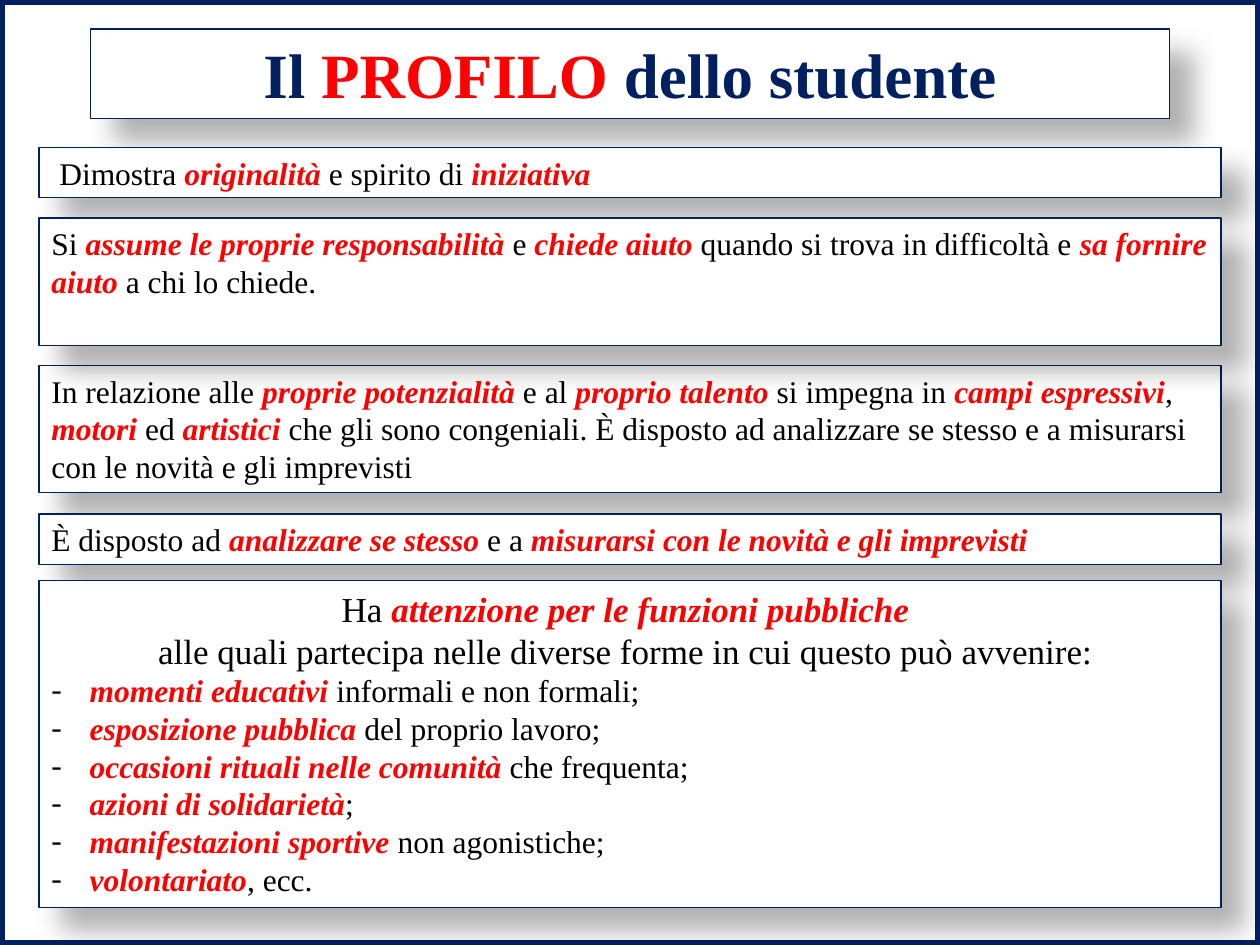
from lxml.etree import SubElement
from pptx import Presentation
from pptx.dml.color import RGBColor
from pptx.enum.shapes import MSO_SHAPE
from pptx.enum.text import MSO_ANCHOR, MSO_AUTO_SIZE, PP_ALIGN
from pptx.oxml.ns import qn
from pptx.util import Inches, Pt

NAVY = RGBColor(0x00, 0x20, 0x60)
RED = RGBColor(0xFF, 0x00, 0x00)
BLACK = RGBColor(0x00, 0x00, 0x00)
WHITE = RGBColor(0xFF, 0xFF, 0xFF)

FONT = "Times New Roman"
BOX_LEFT, BOX_WIDTH = 0.31, 9.38
PLAIN = {"bold": False, "italic": False}
STRONG = {"bold": True, "italic": True}

STATEMENTS = [
    (1.17, 0.4, " Dimostra *originalità* e spirito di *iniziativa*"),
    (2.9, 1.01, "In relazione alle *proprie potenzialità *e al *proprio talento *"
     "si impegna in *campi espressivi*, *motori* ed *artistici* che gli sono "
     "congeniali. È disposto ad analizzare se stesso e a misurarsi con le "
     "novità e gli imprevisti"),
    (1.73, 1.01, "Si *assume le proprie responsabilità *e *chiede aiuto *"
     "quando si trova in difficoltà e *sa fornire aiuto* a chi lo chiede."),
    (4.08, 0.4, "È disposto ad *analizzare se stesso *e a "
     "*misurarsi con le novità e gli imprevisti*"),
]
PUBLIC_HEADING = [
    "Ha *attenzione per le funzioni pubbliche *",
    "alle quali partecipa nelle diverse forme in cui questo può avvenire: ",
]
PUBLIC_ACTIVITIES = [
    " *momenti educativi *informali e non formali;",
    " *esposizione pubblica *del proprio lavoro;",
    " *occasioni rituali nelle comunità *che frequenta;",
    " *azioni di solidarietà*;",
    " *manifestazioni sportive *non agonistiche;",
    " *volontariato*, ecc.",
]


def apply_format(target, values):
    for name, value in values.items():
        setattr(target, name, value)


def outline(shape, width):
    shape.line.color.rgb = NAVY
    shape.line.width = Pt(width)
    shape.shadow.inherit = False


def add_frame(slide, width, height):
    frame = slide.shapes.add_shape(MSO_SHAPE.RECTANGLE, 0, 0, width, height)
    frame.fill.background()
    outline(frame, 6)


def style_box(shape):
    shape.fill.solid()
    shape.fill.fore_color.rgb = WHITE
    outline(shape, 0.75)
    effects = shape._element.spPr.find(qn("a:effectLst"))
    shadow = SubElement(
        effects, qn("a:outerShdw"), blurRad=str(Pt(15)), dist=str(Pt(18)),
        dir="2700000", algn="tl", rotWithShape="0")
    color = SubElement(shadow, qn("a:srgbClr"), val=str(BLACK))
    SubElement(color, qn("a:alpha"), val="30000")
    apply_format(shape.text_frame, {
        "word_wrap": True,
        "auto_size": MSO_AUTO_SIZE.NONE,
        "vertical_anchor": MSO_ANCHOR.TOP,
    })


def add_box(slide, top, height):
    box = slide.shapes.add_shape(
        MSO_SHAPE.RECTANGLE, Inches(BOX_LEFT), Inches(top),
        Inches(BOX_WIDTH), Inches(height))
    style_box(box)
    return box


def write_marked(paragraph, text, size, alignment=PP_ALIGN.LEFT,
                 plain=PLAIN, strong=STRONG, color=BLACK):
    paragraph.alignment = alignment
    for index, part in enumerate(text.split("*")):
        if not part:
            continue
        run = paragraph.add_run()
        run.text = part
        emphasised = index % 2 == 1
        apply_format(run.font, {"name": FONT, "size": Pt(size),
                                **(strong if emphasised else plain)})
        run.font.color.rgb = RED if emphasised else color


def add_dash(paragraph):
    properties = paragraph._p.get_or_add_pPr()
    indent = Inches(0.24)
    properties.set("marL", str(indent))
    properties.set("indent", str(-indent))
    SubElement(properties, qn("a:buFont"), typeface=FONT)
    SubElement(properties, qn("a:buChar"), char="-")


def write_title(title):
    apply_format(title, {"left": Inches(0.72), "top": Inches(0.23),
                         "width": Inches(8.56), "height": Inches(0.71)})
    style_box(title)
    bold = {"bold": True}
    write_marked(title.text_frame.paragraphs[0], "Il *PROFILO *dello studente",
                 36, PP_ALIGN.CENTER, bold, bold, NAVY)


def add_statement(slide, top, height, text):
    box = add_box(slide, top, height)
    write_marked(box.text_frame.paragraphs[0], text, 18)


def add_public_functions(slide):
    text_frame = add_box(slide, 4.61, 2.59).text_frame
    paragraph = text_frame.paragraphs[0]
    for index, text in enumerate(PUBLIC_HEADING):
        if index:
            paragraph = text_frame.add_paragraph()
        write_marked(paragraph, text, 20, PP_ALIGN.CENTER)
    for text in PUBLIC_ACTIVITIES:
        paragraph = text_frame.add_paragraph()
        write_marked(paragraph, text, 18)
        add_dash(paragraph)


def main():
    presentation = Presentation()
    presentation.slide_width = Inches(10)
    presentation.slide_height = Inches(7.5)
    slide = presentation.slides.add_slide(presentation.slide_layouts[5])
    write_title(slide.shapes.title)
    add_frame(slide, presentation.slide_width, presentation.slide_height)
    for top, height, text in STATEMENTS:
        add_statement(slide, top, height, text)
    add_public_functions(slide)
    presentation.save("out.pptx")


if __name__ == "__main__":
    main()
